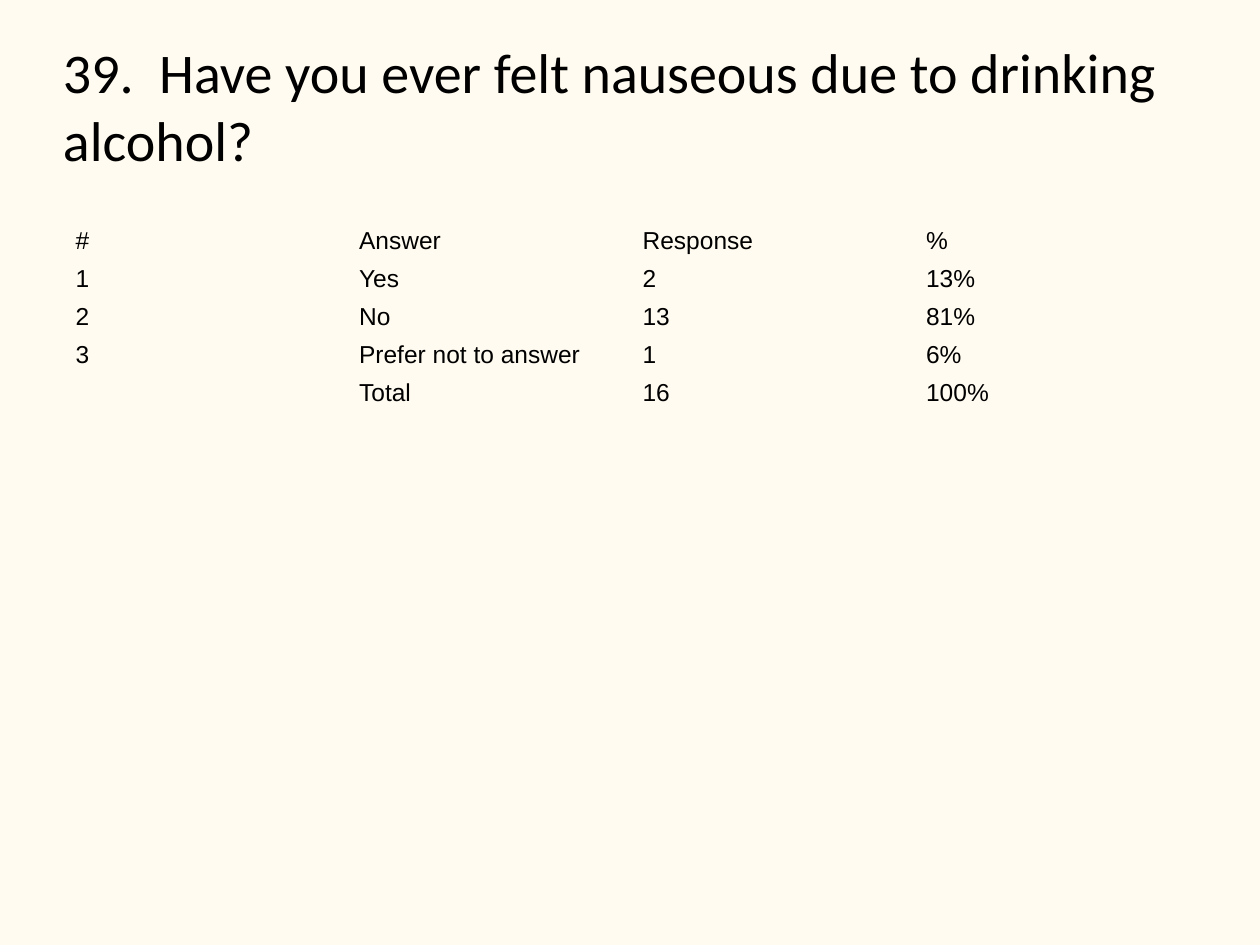
from pptx import Presentation
from pptx import util as u
from pptx.dml.color import RGBColor
from pptx.enum import shapes, text
from pptx.oxml.ns import qn

CREAM = RGBColor(0xFF, 0xFB, 0xF0)
BLACK = RGBColor(0, 0, 0)
NO_STYLE = "{2D5ABB26-0587-4C30-8999-92F81FD0307C}"
TITLE_FONT = {"name": "Calibri", "size": u.Pt(32)}
CELL_FONT = {"name": "Arial", "size": u.Pt(14)}
QUESTION = "39.  Have you ever felt nauseous due to drinking alcohol?"
ANSWERS = [
    ("#", "Answer", "Response", "%"),
    ("1", "Yes", "2", "13%"),
    ("2", "No", "13", "81%"),
    ("3", "Prefer not to answer", "1", "6%"),
    ("", "Total", "16", "100%"),
]


def set_all(obj, values):
    for name, value in values.items():
        setattr(obj, name, value)


def write(tf, words, font):
    p = tf.paragraphs[0]
    p.alignment = text.PP_ALIGN.LEFT
    r = p.add_run()
    r.text = words
    set_all(r.font, font)
    r.font.color.rgb = BLACK


def add_title(s, words):
    sp = s.shapes.add_shape(shapes.MSO_SHAPE.ROUNDED_RECTANGLE, u.Inches(0.5),
                            u.Inches(0.3), u.Inches(9), u.Inches(1.25))
    sp.adjustments[0] = 0
    sp.shadow.inherit = False
    sp.fill.background()
    sp.line.fill.background()
    tf = sp.text_frame
    set_all(tf, {
        "word_wrap": True, "vertical_anchor": text.MSO_ANCHOR.TOP,
        "margin_left": 0, "margin_top": 0, "margin_right": 0, "margin_bottom": 0,
    })
    write(tf, words, TITLE_FONT)


def add_answer_table(s, rows):
    row_height = u.Inches(0.19)
    frame = s.shapes.add_table(len(rows), len(rows[0]), u.Inches(0.5), u.Inches(1.75),
                               u.Inches(9), row_height * len(rows))
    table = frame.table
    set_all(table, {"first_row": False, "horz_banding": False})
    frame._element.find(".//" + qn("a:tableStyleId")).text = NO_STYLE
    for row, values in zip(table.rows, rows):
        row.height = row_height
        for cell, value in zip(row.cells, values):
            cell.fill.background()
            cell.margin_bottom = u.Pt(2.45)
            if value:
                write(cell.text_frame, value, CELL_FONT)


def main():
    prs = Presentation()
    set_all(prs, {"slide_width": u.Inches(10), "slide_height": u.Inches(7.5)})
    s = prs.slides.add_slide(prs.slide_layouts[6])
    s.background.fill.solid()
    s.background.fill.fore_color.rgb = CREAM
    add_title(s, QUESTION)
    add_answer_table(s, ANSWERS)
    prs.save("out.pptx")


if __name__ == "__main__":
    main()
